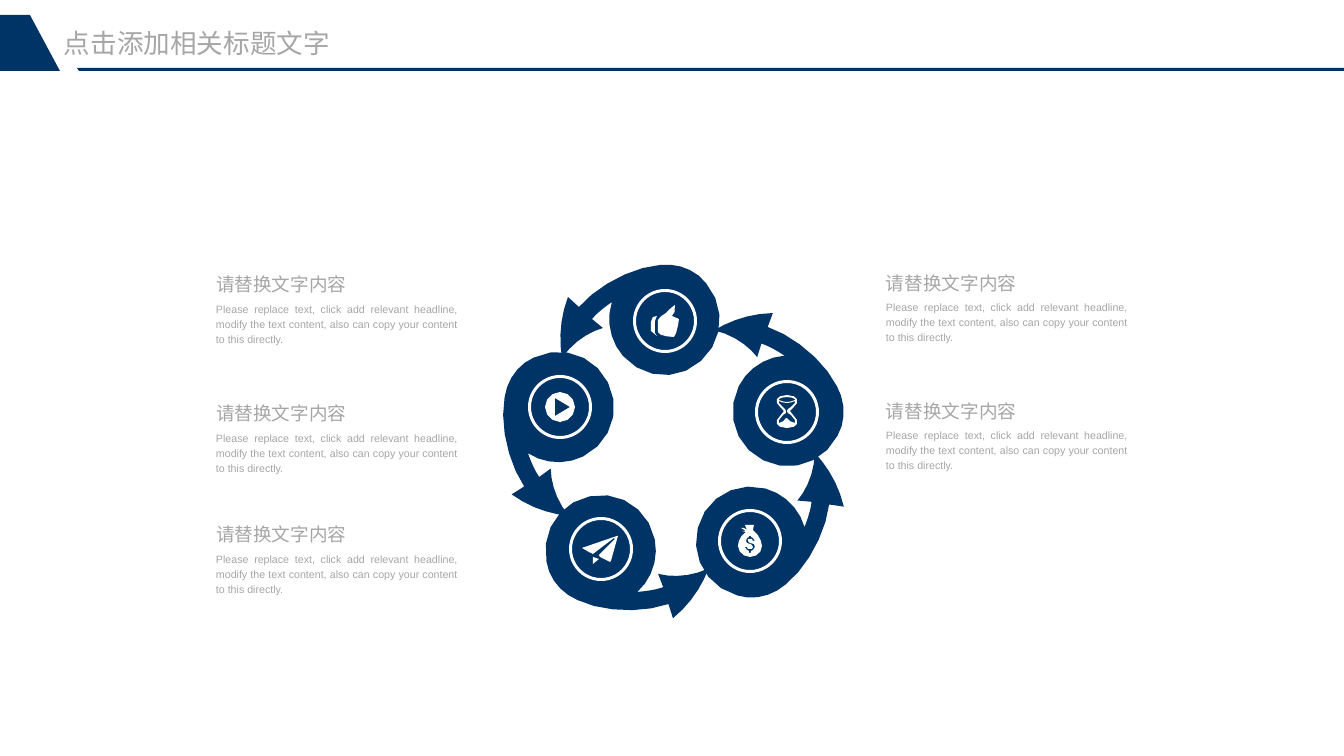
from math import ceil, cos, dist, radians, sin

from pptx import Presentation
from pptx import util as u
from pptx.dml.color import RGBColor
from pptx.enum import shapes, text

PX = 914400 / 95.6
NAVY = RGBColor(0x00, 0x33, 0x66)
GREY = RGBColor(0xA6, 0xA6, 0xA6)
WHITE = RGBColor(0xFF, 0xFF, 0xFF)
FONT = "Arial"

HEADING = "点击添加相关标题文字"
ITEM_TITLE = "请替换文字内容"
ITEM_BODY = ("Please replace text, click add relevant headline, modify the text content, "
             "also can copy your content to this directly.")
ITEM_COLUMNS = {216: (269, 398, 519), 886: (267, 395)}  # left: tops
BODY_DROP = 31

HEADER_TAB = [[(30, 15), (60, 71), (0, 71), (0, 15)]]
HEADER_RULE = [[(77, 68), (1344, 68), (1344, 71), (79, 71)]]

# Outlines are lists of contours around the centre of a node.
# A pair is a corner; six numbers are a Bezier curve (two controls, then its end).
SWIRL = [[
    (-86, -14), (-68, -35, -33, -54, -5, -56), (12, -58, 30, -52, 41, -38),
    (61, -15, 59, 20, 36, 40), (13, 61, -22, 58, -42, 35), (-55, 20, -59, -1, -53, -19),
    (-60, -14, -67, -9, -73, -2), (-62, 7), (-76, 11, -92, 21, -103, 37),
    (-106, 18, -105, -3, -97, -24),
]]
THUMB = [
    [(-8, -5), (-11, -5, -14, -4, -14, 1), (-14, 10), (-14, 15, -11, 15, -8, 15),
     (-10, 12), (-10, 0), (-10, -4, -8, -5, -8, -5)],
    [(7, -5), (7, -6, 13, -11, 10, -16), (8, -17, 6, -11, 1, -8), (-2, -6, -7, -3, -7, -1),
     (-7, 11), (-7, 14, 2, 16, 9, 16), (11, 16, 14, 1, 14, -2), (14, -4, 7, -4, 7, -5)],
]
PLAY = [
    [(0, -15), (8, -15, 15, -8, 15, 0), (15, 8, 8, 15, 0, 15),
     (-8, 15, -15, 8, -15, 0), (-15, -8, -8, -15, 0, -15)],
    [(-5, -9), (10, 0), (-5, 9)],
]
PLANE = [
    [(-8, 15), (-2, 10), (-8, 8)],
    [(16, -13), (-19, -1), (-12, 3), (-8, 5), (13, -11), (14, -10), (-2, 6), (-1, 8),
     (9, 13), (10, 12), (17, -13)],
]
MONEY_BAG = [
    [(-3, -11), (-6, -13), (-9, -13), (-4, -10), (-8, -10), (-4, -9),
     (-9, -6, -12, 0, -12, 5), (-12, 11, -6, 16, 0, 16), (7, 16, 12, 11, 12, 5),
     (12, 0, 8, -7, 4, -10), (3, -11), (4, -16), (-5, -16)],
    [(3, 9), (1, 10), (1, 12), (-1, 12), (-1, 10), (-3, 9), (-5, 6), (-3, 6), (-2, 8),
     (0, 8), (2, 8), (3, 6), (2, 4), (0, 3), (-3, 2), (-4, 0), (-3, -3), (-1, -4), (-1, -5),
     (1, -5), (1, -4), (3, -3), (5, 0), (3, 0), (2, -2), (0, -2), (-2, -2), (-2, 0),
     (0, 2), (4, 3), (5, 6)],
]
HOURGLASS = [
    [(10, -9), (10, -13), (10, -15, 5, -17, 0, -17), (-5, -17, -10, -15, -10, -13), (-10, -9),
     (-10, -6, -3, -3, -3, -1), (-3, 2, -10, 5, -10, 8), (-10, 12), (-10, 14, -5, 16, 0, 16),
     (5, 16, 10, 14, 10, 12), (10, 8), (10, 5, 3, 2, 3, -1), (3, -3, 10, -6, 10, -9)],
    [(-8, -13), (-6, -14, -4, -15, 0, -15), (4, -15, 6, -14, 8, -13), (8, -12),
     (6, -11, 3, -10, 0, -10), (-3, -10, -6, -11, -8, -12)],
    [(0, -1), (1, 1), (4, 3), (8, 8), (8, 11), (6, 10, 0, 9, 0, 6), (-1, 6),
     (-1, 9, -6, 10, -8, 11), (-8, 8), (-4, 3), (-1, 1), (-1, -1), (-2, -3), (-4, -5),
     (-8, -9), (-8, -11), (-6, -10, -4, -9, 0, -9), (3, -9, 6, -10, 8, -11), (8, -9),
     (4, -5), (1, -3)],
]
RING_SIZE = 61
# centre x, centre y, turn of the swirl in degrees, icon
NODES = [
    (601, 549, -150, PLANE),
    (750, 541, -214, MONEY_BAG),
    (560, 407, -75, PLAY),
    (665, 321, 0, THUMB),
    (787, 412, -292, HOURGLASS),
]


def px(length):
    return u.Emu(round(length * PX))


def flatten(contour):
    """Turn corners and Bezier curves into points, with more steps on longer curves."""
    points = [contour[0]]
    for part in contour[1:]:
        if len(part) == 2:
            points.append(part)
            continue
        x0, y0 = points[-1]
        x1, y1, x2, y2, x3, y3 = part
        steps = min(5, ceil(dist((x0, y0), (x3, y3)) / 8))
        for step in range(1, steps + 1):
            t = step / steps
            a, b, c, d = (1 - t) ** 3, 3 * t * (1 - t) ** 2, 3 * t * t * (1 - t), t ** 3
            points.append((a * x0 + b * x1 + c * x2 + d * x3,
                           a * y0 + b * y1 + c * y2 + d * y3))
    return points


def add_outline(slide, contours, color, centre=(0, 0), turn=0):
    cosine, sine = cos(radians(turn)), sin(radians(turn))
    builder = None
    for contour in contours:
        points = [(px(centre[0] + x * cosine - y * sine), px(centre[1] + x * sine + y * cosine))
                  for x, y in flatten(contour)]
        if builder is None:
            builder = slide.shapes.build_freeform(*points[0])
        else:
            builder.move_to(*points[0])
        builder.add_line_segments(points[1:], close=True)
    outline = builder.convert_to_shape()
    outline.shadow.inherit = False
    outline.fill.solid()
    outline.fill.fore_color.rgb = color
    outline.line.fill.background()


def add_ring(slide, x, y):
    corner = RING_SIZE / 2
    ring = slide.shapes.add_shape(shapes.MSO_SHAPE.OVAL, px(x - corner), px(y - corner),
                                  px(RING_SIZE), px(RING_SIZE))
    ring.shadow.inherit = False
    ring.fill.background()
    ring.line.color.rgb = WHITE
    ring.line.width = u.Pt(2.25)


def add_text(slide, words, box, size, align=text.PP_ALIGN.JUSTIFY, spacing=1.2):
    frame = slide.shapes.add_textbox(*map(px, box)).text_frame
    frame.word_wrap = True
    frame.margin_left = frame.margin_top = frame.margin_right = frame.margin_bottom = 0
    paragraph = frame.paragraphs[0]
    paragraph.text = words
    paragraph.alignment = align
    paragraph.line_spacing = spacing
    paragraph.font.size = u.Pt(size)
    paragraph.font.name = FONT
    paragraph.font.color.rgb = GREY


def main():
    deck = Presentation()
    deck.slide_width, deck.slide_height = px(1344), px(756)
    slide = deck.slides.add_slide(deck.slide_layouts[6])

    for x, y, turn, icon in NODES:
        add_outline(slide, SWIRL, NAVY, (x, y), turn)
        add_ring(slide, x, y)
        add_outline(slide, icon, WHITE, (x, y))

    for left, tops in ITEM_COLUMNS.items():
        for top in tops:
            add_text(slide, ITEM_TITLE, (left, top, 213, 25), 14)
            add_text(slide, ITEM_BODY, (left, top + BODY_DROP, 242, 45), 8)

    add_outline(slide, HEADER_RULE, NAVY)
    add_outline(slide, HEADER_TAB, NAVY)
    add_text(slide, HEADING, (64, 27, 320, 32), 20, text.PP_ALIGN.LEFT, 1.0)
    deck.save("out.pptx")


if __name__ == "__main__":
    main()
